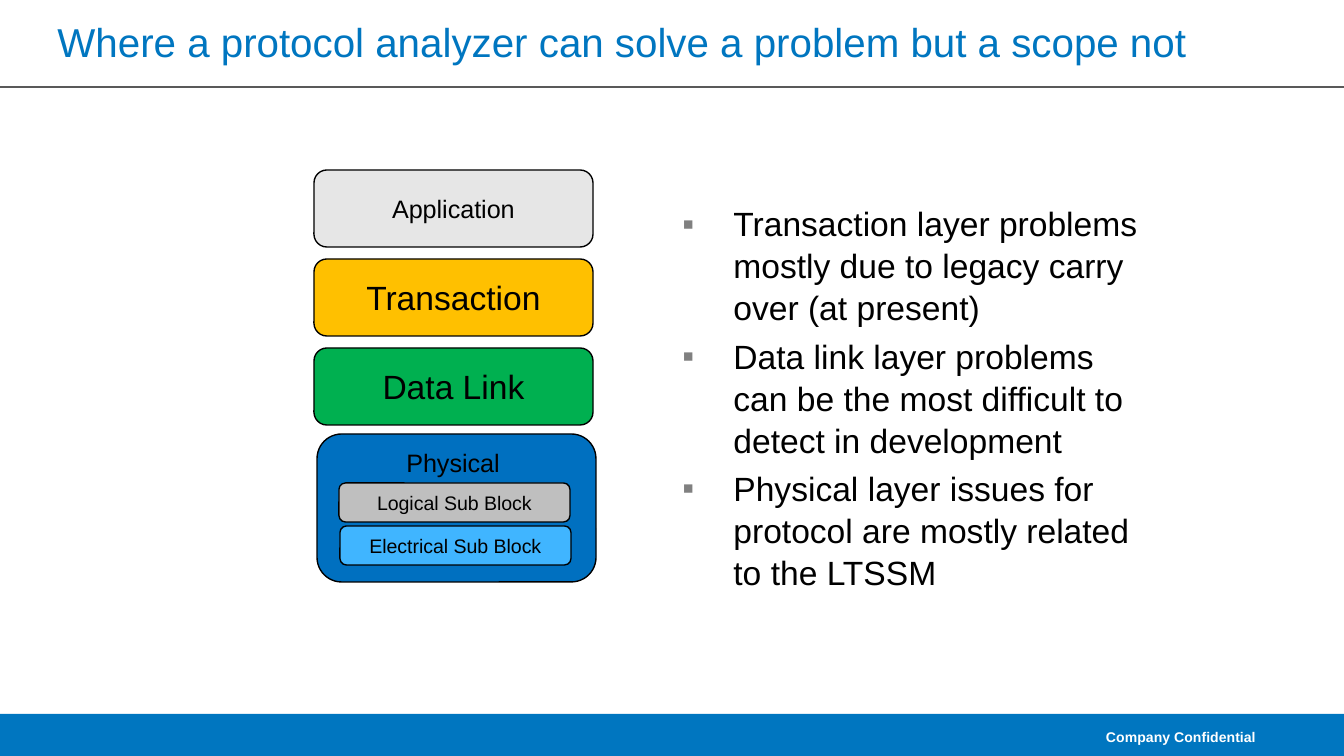
from lxml.etree import SubElement
from pptx import Presentation
from pptx.dml.color import RGBColor
from pptx.enum.shapes import MSO_CONNECTOR, MSO_SHAPE
from pptx.enum.text import MSO_ANCHOR, MSO_AUTO_SIZE, PP_ALIGN
from pptx.oxml.ns import qn
from pptx.util import Emu, Pt

SLIDE_W, SLIDE_H = 1344, 756
EMU_PER_PX = 914400 / 134.4
FONT = "Arial"
BLACK, WHITE, BRAND_BLUE = "000000", "FFFFFF", "0076C0"
LAYERS = [
    ("Application", "E6E6E6", 13.5),
    ("Transaction", "FFC000", 18),
    ("Data Link", "00B050", 18),
]
SUB_BLOCKS = [
    ("Logical Sub Block", "BFBFBF"),
    ("Electrical Sub Block", "40B5FF"),
]
FINDINGS = [
    "Transaction layer problems mostly due to legacy carry over (at present)",
    "Data link layer problems can be the most difficult to detect in development",
    "Physical layer issues for protocol are mostly related to the LTSSM",
]


def px(length):
    """Turn pixels into EMU."""
    return Emu(round(length * EMU_PER_PX))


def rgb(hex_code):
    """Turn a hex string into a colour."""
    return RGBColor.from_string(hex_code)


def place(part, box):
    """Move and size a part to a pixel box."""
    part.left, part.top, part.width, part.height = map(px, box)


def add_run(paragraph, text, size, color, bold=False):
    """Add one formatted run."""
    run = paragraph.add_run()
    run.text = text
    run.font.name = FONT
    run.font.size = Pt(size)
    run.font.bold = bold
    run.font.color.rgb = rgb(color)


def add_block(slide, box, fill, kind=MSO_SHAPE.ROUNDED_RECTANGLE, outline=BLACK):
    """Add a flat filled block."""
    block = slide.shapes.add_shape(kind, *map(px, box))
    block.shadow.inherit = False
    block.fill.solid()
    block.fill.fore_color.rgb = rgb(fill)
    if outline:
        block.line.color.rgb = rgb(outline)
        block.line.width = Pt(0.75)
    else:
        block.line.fill.background()
    return block


def add_layer(slide, box, name, fill, size, anchor=MSO_ANCHOR.MIDDLE):
    """Add a named protocol layer."""
    frame = add_block(slide, box, fill).text_frame
    frame.word_wrap = True
    frame.vertical_anchor = anchor
    frame.paragraphs[0].alignment = PP_ALIGN.CENTER
    add_run(frame.paragraphs[0], name, size, BLACK)


def add_header(slide, box):
    """Place the title with the rule that closes the header."""
    left, top, width, height = box
    title = slide.shapes.title
    place(title, (left + 44, top + 8, width - 78, height - 20))
    frame = title.text_frame
    frame.auto_size = MSO_AUTO_SIZE.NONE
    frame.vertical_anchor = MSO_ANCHOR.MIDDLE
    frame.paragraphs[0].alignment = PP_ALIGN.LEFT
    add_run(frame.paragraphs[0],
            "Where a protocol analyzer can solve a problem but a scope not",
            21.6, BRAND_BLUE)
    bottom = top + height
    rule = slide.shapes.add_connector(
        MSO_CONNECTOR.STRAIGHT, px(left), px(bottom), px(left + width), px(bottom))
    rule.line.color.rgb = rgb("595959")
    rule.line.width = Pt(0.75)
    SubElement(rule._element.spPr, qn("a:effectLst"))


def add_stack(slide, box):
    """Draw the layer stack, with the physical layer at its foot."""
    left, top, width, height = box
    pitch = 89
    for index, (name, fill, size) in enumerate(LAYERS):
        add_layer(slide, (left, top + index * pitch, width, 77), name, fill, size)
    physical_top = top + len(LAYERS) * pitch - 3
    add_physical(slide, (left + 3, physical_top, width, top + height - physical_top))


def add_physical(slide, box):
    """Draw the physical layer and its sub blocks."""
    left, top, width, height = box
    add_layer(slide, box, "Physical ", "0070C0", 13.5, MSO_ANCHOR.TOP)
    for index, (name, fill) in enumerate(SUB_BLOCKS):
        sub_box = (left + 22 + index, top + 49 + index * 43, width - 48, 39)
        add_layer(slide, sub_box, name, fill, 10.5)


def add_findings(slide, box):
    """Fill the body placeholder with the bulleted findings."""
    body = slide.placeholders[1]
    place(body, box)
    frame = body.text_frame
    frame.auto_size = MSO_AUTO_SIZE.NONE
    frame.vertical_anchor = MSO_ANCHOR.TOP
    for index, finding in enumerate(FINDINGS):
        paragraph = frame.add_paragraph() if index else frame.paragraphs[0]
        properties = paragraph._p.get_or_add_pPr()
        properties.set("marL", str(px(51)))
        properties.set("indent", str(-px(51)))
        bullet_color = SubElement(properties, qn("a:buClr"))
        SubElement(bullet_color, qn("a:srgbClr"), val="808080")
        SubElement(properties, qn("a:buFont"), typeface=FONT)
        SubElement(properties, qn("a:buChar"), char="▪")
        paragraph.line_spacing = 1.04
        paragraph.space_before = Pt(3.6 if index else 0)
        add_run(paragraph, finding, 18, BLACK)


def add_footer(slide, box):
    """Draw the footer band with its confidentiality note."""
    left, top, width, height = box
    add_block(slide, box, BRAND_BLUE, MSO_SHAPE.RECTANGLE, None)
    note_box = (left + width - 258, top + 5, 183, height - 6)
    frame = slide.shapes.add_textbox(*map(px, note_box)).text_frame
    frame.word_wrap = True
    frame.vertical_anchor = MSO_ANCHOR.MIDDLE
    frame.paragraphs[0].alignment = PP_ALIGN.RIGHT
    add_run(frame.paragraphs[0], "Company Confidential", 7.5, WHITE, True)


def main():
    """Build and save the slide."""
    deck = Presentation()
    deck.slide_width, deck.slide_height = px(SLIDE_W), px(SLIDE_H)
    slide = deck.slides.add_slide(deck.slide_layouts[1])
    add_header(slide, (0, 0, SLIDE_W, 87))
    add_findings(slide, (669, 195, 487, 534))
    add_stack(slide, (314, 170, 279, 412))
    add_footer(slide, (0, 714, SLIDE_W, 42))
    deck.save("out.pptx")


if __name__ == "__main__":
    main()
